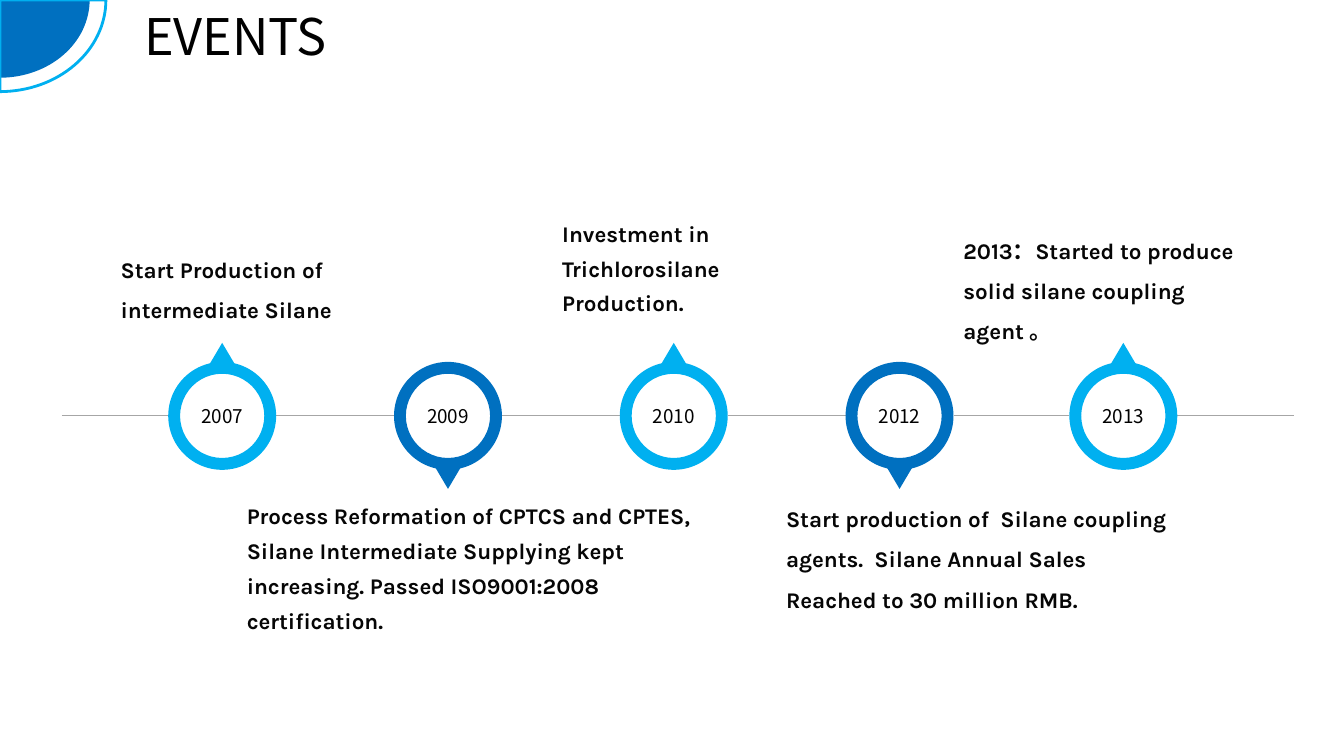
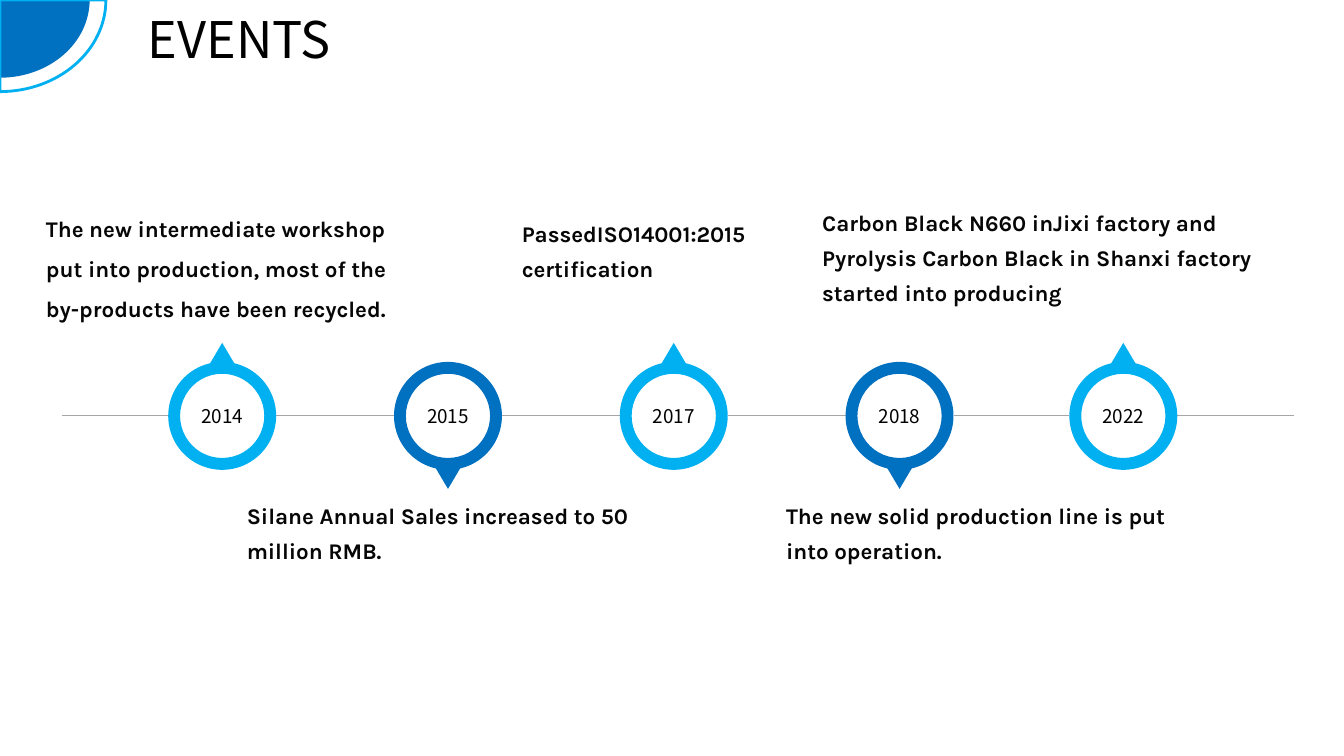
"""Build two timeline slides of company events."""
import math
from dataclasses import dataclass
from typing import Any

import lxml.etree
import pptx
import pptx.dml.color
import pptx.enum.shapes
import pptx.enum.text
import pptx.oxml.ns
import pptx.slide
import pptx.util

Cm = pptx.util.Cm
Pt = pptx.util.Pt
Kind = pptx.enum.shapes.MSO_SHAPE

COLORS = {
    "sky": "00B0F0",
    "blue": "0070C0",
    "grey": "A6A6A6",
    "note": "060606",
    "black": "000000",
}
HEAD = "Noto Sans CJK SC"
BODY = "Karla"

LEFTS = (4.24, 9.93, 15.62, 21.31, 26.95)
RING = 2.72
TOP = 9.12
AXIS = 10.47
START, END = 1.56, 32.62
TIP_W, TIP_H = 0.84, 0.71
TIP_UP, TIP_DOWN = 8.64, 11.61


@dataclass
class Event:
    year: str
    text: str
    left: float
    top: float
    width: float
    height: float
    lead: float = 1.3


@dataclass
class Page:
    left: float
    top: float
    events: list[Event]


PAGES = [
    Page(3.38, 0, [
        Event("2007", "Start Production of intermediate Silane",
              2.79, 5.99, 6.12, 2.31, 1.5),
        Event("2009", "Process Reformation of CPTCS and CPTES, Silane Intermediate "
              "Supplying kept increasing. Passed ISO9001:2008 certification.",
              5.97, 12.32, 12.37, 3.81),
        Event("2010", "Investment in Trichlorosilane Production.",
              13.92, 5.21, 6.12, 2.92),
        Event("2012", "Start production of  Silane coupling agents.  Silane Annual "
              "Sales Reached to 30 million RMB.",
              19.56, 12.27, 10.11, 3.33, 1.5),
        Event("2013", "2013：Started to produce solid silane coupling agent 。",
              24.03, 5.51, 8.31, 2.31, 1.5),
    ]),
    Page(3.48, 0.08, [
        Event("2014", "The new intermediate workshop put into production, most of "
              "the by-products have been recycled.",
              0.91, 4.95, 9.78, 3.33, 1.5),
        Event("2015", "Silane Annual Sales increased to 50 million RMB.",
              5.97, 12.32, 10.59, 2.03),
        Event("2017", "PassedISO14001:2015 certification",
              12.9, 5.21, 7.39, 3.1),
        Event("2018", "The new solid production line is put into operation.",
              19.56, 12.32, 10.11, 2.03),
        Event("2022", "Carbon Black N660 inJixi factory and Pyrolysis Carbon Black "
              "in Shanxi factory started into producing",
              20.47, 4.95, 11.66, 2.92),
    ]),
]


def tint(name: str) -> pptx.dml.color.RGBColor:
    return pptx.dml.color.RGBColor.from_string(COLORS[name])


def paint(shape: Any, fill: str = "", line: str = "") -> None:
    shape.shadow.inherit = False
    if fill:
        shape.fill.solid()
        shape.fill.fore_color.rgb = tint(fill)
    else:
        shape.fill.background()
    if line:
        shape.line.color.rgb = tint(line)
        shape.line.width = Pt(2)
    else:
        shape.line.fill.background()


def write(frame: Any, text: str, face: str, size: float, color: str) -> Any:
    para = frame.paragraphs[0]
    para.text = text
    para.font.name = face
    para.font.size = Pt(size)
    para.font.color.rgb = tint(color)
    return para


def add_arc(shapes: Any, width: float, height: float, fill: str, line: str) -> None:
    steps = 32
    turns = [math.pi / 2 * i / steps for i in range(steps + 1)]
    rim = [(Cm(width * math.sin(t)), Cm(height * math.cos(t))) for t in turns]
    pen = shapes.build_freeform(0, 0)
    pen.add_line_segments(rim, close=True)
    paint(pen.convert_to_shape(), fill, line)


def add_head(slide: pptx.slide.Slide, page: Page) -> None:
    group = slide.shapes.add_group_shape()
    add_arc(group.shapes, 2.26, 1.96, "blue", "")
    add_arc(group.shapes, 2.67, 2.31, "", "sky")
    box = slide.shapes.add_textbox(Cm(page.left), Cm(page.top), Cm(5.26), Cm(1.8))
    box.text_frame.word_wrap = False
    write(box.text_frame, "EVENTS", HEAD, 36, "black")


def add_axis(slide: pptx.slide.Slide) -> None:
    starts = [START] + [left + RING for left in LEFTS]
    for begin, end in zip(starts, [*LEFTS, END]):
        line = slide.shapes.add_connector(
            pptx.enum.shapes.MSO_CONNECTOR.STRAIGHT,
            Cm(begin), Cm(AXIS), Cm(end), Cm(AXIS))
        line.line.color.rgb = tint("grey")
        line.line.width = Pt(0.75)
        lxml.etree.SubElement(
            line._element.spPr, pptx.oxml.ns.qn("a:effectLst"))


def add_mark(slide: pptx.slide.Slide, left: float, year: str, down: bool) -> None:
    color = "blue" if down else "sky"
    group = slide.shapes.add_group_shape()
    ring = group.shapes.add_shape(
        Kind.DONUT, Cm(left), Cm(TOP), Cm(RING), Cm(RING))
    ring.adjustments[0] = 0.11
    paint(ring, color)
    frame = ring.text_frame
    frame.margin_left = frame.margin_right = 0
    frame.vertical_anchor = pptx.enum.text.MSO_ANCHOR.MIDDLE
    para = write(frame, year, HEAD, 13.5, "black")
    para.alignment = pptx.enum.text.PP_ALIGN.CENTER
    tip = group.shapes.add_shape(
        Kind.ISOSCELES_TRIANGLE, Cm(left + (RING - TIP_W) / 2),
        Cm(TIP_DOWN if down else TIP_UP), Cm(TIP_W), Cm(TIP_H))
    tip.rotation = 180 if down else 0
    paint(tip, color)


def add_note(slide: pptx.slide.Slide, event: Event) -> None:
    box = slide.shapes.add_textbox(
        Cm(event.left), Cm(event.top), Cm(event.width), Cm(event.height))
    box.text_frame.word_wrap = True
    para = write(box.text_frame, event.text, BODY, 16, "note")
    para.font.bold = True
    para.line_spacing = event.lead


def main() -> None:
    deck = pptx.Presentation()
    deck.slide_width, deck.slide_height = Cm(33.87), Cm(19.05)
    for page in PAGES:
        slide = deck.slides.add_slide(deck.slide_layouts[6])
        add_axis(slide)
        for i, (left, event) in enumerate(zip(LEFTS, page.events)):
            add_mark(slide, left, event.year, i % 2 == 1)
            add_note(slide, event)
        add_head(slide, page)
    deck.save("out.pptx")


if __name__ == "__main__":
    main()
